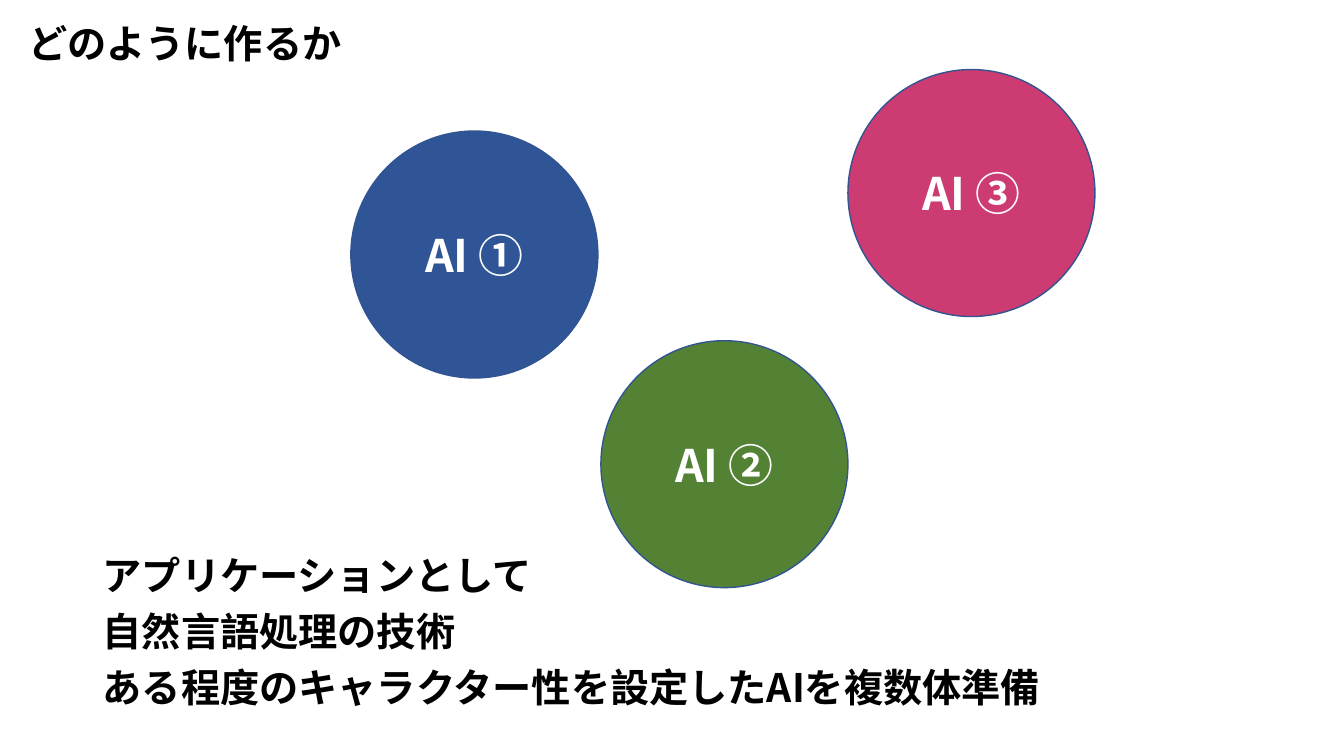
"""Build a slide showing three AI characters and how they are made."""
import pptx
import pptx.util
import pptx.dml.color
import pptx.enum.shapes
import pptx.enum.text
import pptx.oxml.ns
from lxml import etree

TITLE = "どのように作るか"
POINTS = [
    "アプリケーションとして",
    "自然言語処理の技術",
    "ある程度のキャラクター性を設定したAIを複数体準備",
]
CIRCLES = [
    ("AI ①", "blue", 3.48, 1.3),
    ("AI ②", "green", 5.96, 3.38),
    ("AI ③", "pink", 8.41, 0.69),
]
COLORS = {
    "blue": "2F5597", "green": "548235", "pink": "CC3C73",
    "outline": "325491", "black": "000000", "white": "FFFFFF",
}
DIAMETER = 2.45
TEXT_WIDTH = 11.5
JAPANESE = "Noto Sans CJK JP"
ALIGN = pptx.enum.text.PP_ALIGN
ANCHOR = pptx.enum.text.MSO_ANCHOR
FIT = pptx.enum.text.MSO_AUTO_SIZE


def color(name):
    return pptx.dml.color.RGBColor.from_string(COLORS[name])


def place(shape, *lengths):
    shape.left, shape.top, shape.width, shape.height = map(pptx.util.Inches, lengths)


def write(shape, lines, size=28, ink="black", font=JAPANESE, align=ALIGN.LEFT,
          anchor=ANCHOR.MIDDLE, fit=FIT.NONE, leading=1.0, before=0):
    frame = shape.text_frame
    frame.text = "\n".join(lines)
    frame.word_wrap = True
    frame.auto_size = fit
    frame.vertical_anchor = anchor
    for index, para in enumerate(frame.paragraphs):
        para.alignment = align
        para.line_spacing = leading
        para.space_before = pptx.util.Pt(before if index else 0)
        properties = para._p.get_or_add_pPr()
        properties.set("marL", "0")
        properties.set("indent", "0")
        etree.SubElement(properties, pptx.oxml.ns.qn("a:buNone"))
        for span in para.runs:
            span.font.size = pptx.util.Pt(size)
            span.font.bold = True
            span.font.name = font
            span.font.color.rgb = color(ink)
            east_asian = etree.SubElement(span.font._element, pptx.oxml.ns.qn("a:ea"))
            east_asian.set("typeface", JAPANESE)


def add_circle(page, label, fill, left, top):
    circle = page.shapes.add_shape(
        pptx.enum.shapes.MSO_SHAPE.OVAL,
        *map(pptx.util.Inches, (left, top, DIAMETER, DIAMETER)))
    circle.shadow.inherit = False
    circle.fill.solid()
    circle.fill.fore_color.rgb = color(fill)
    circle.line.color.rgb = color("outline")
    circle.line.width = pptx.util.Pt(1)
    write(circle, [label], size=32, ink="white", align=ALIGN.CENTER)


def main():
    deck = pptx.Presentation()
    deck.slide_width = pptx.util.Inches(13.33)
    deck.slide_height = pptx.util.Inches(7.5)
    page = deck.slides.add_slide(deck.slide_layouts[1])
    title, body = page.placeholders
    place(title, 0.18, 0.16, TEXT_WIDTH, 0.59)
    write(title, [TITLE], font="Arial", leading=0.9)
    place(body, 0.92, 5.47, TEXT_WIDTH, 1.75)
    write(body, POINTS, anchor=ANCHOR.TOP, fit=FIT.TEXT_TO_FIT_SHAPE,
          leading=0.9, before=10)
    for circle in CIRCLES:
        add_circle(page, *circle)
    deck.save("out.pptx")


if __name__ == "__main__":
    main()
